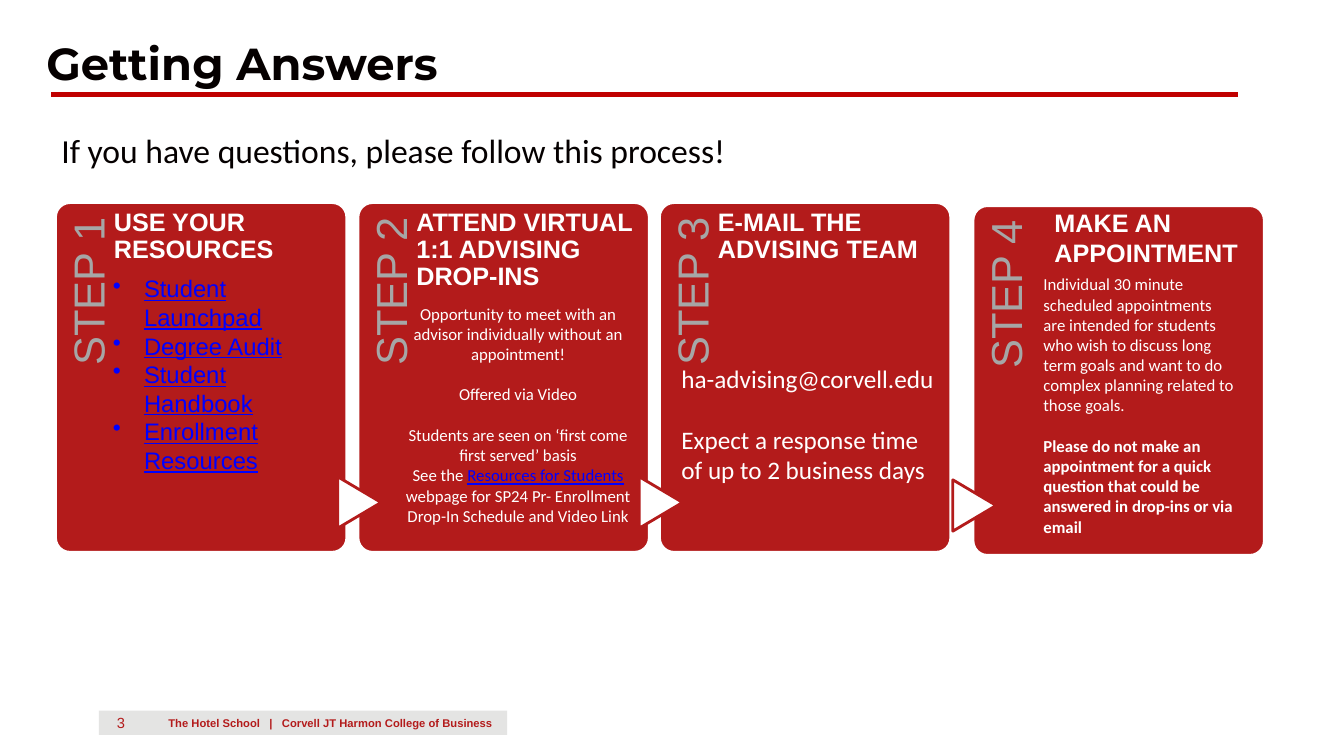
from lxml import etree
from pptx import Presentation
from pptx.dml.color import RGBColor
from pptx.enum.shapes import MSO_CONNECTOR, MSO_SHAPE
from pptx.enum.text import MSO_ANCHOR, MSO_AUTO_SIZE, PP_ALIGN
from pptx.oxml.ns import qn
from pptx.util import Inches, Pt

RED = RGBColor(0xB3, 0x1B, 0x1B)
RULE_RED = RGBColor(0xC0, 0x00, 0x00)
INK = RGBColor(0x05, 0x00, 0x00)
WHITE = RGBColor(0xFF, 0xFF, 0xFF)
STEP_GRAY = RGBColor(0xA6, 0xA6, 0xA6)
FOOTER_GRAY = RGBColor(0xE4, 0xE4, 0xE3)
LINK_BLUE = RGBColor(0x00, 0x00, 0xFF)

RECTANGLE = MSO_SHAPE.RECTANGLE
ROUNDED = MSO_SHAPE.ROUNDED_RECTANGLE
TRIANGLE = MSO_SHAPE.FLOWCHART_EXTRACT
STRAIGHT = MSO_CONNECTOR.STRAIGHT
LEFT, CENTER, RIGHT = PP_ALIGN.LEFT, PP_ALIGN.CENTER, PP_ALIGN.RIGHT
TOP, BOTTOM = MSO_ANCHOR.TOP, MSO_ANCHOR.BOTTOM
NO_AUTOFIT = MSO_AUTO_SIZE.NONE

DEFAULT_INSETS = (0.1, 0.05, 0.1, 0.05)
CARD_WIDTH, CARD_HEIGHT = 2.89, 3.47
CARDS = [
    (0.55, 2.01, "USE YOUR RESOURCES"),
    (3.55, 2.01, "ATTEND VIRTUAL 1:1 ADVISING DROP-INS"),
    (6.54, 2.01, "E-MAIL THE ADVISING TEAM"),
    (9.65, 2.04, "MAKE AN APPOINTMENT"),
]


def style_run(run, size, font, color, bold=False, underline=False):
    run.font.size = Pt(size)
    run.font.name = font
    run.font.color.rgb = color
    run.font.bold = bold
    run.font.underline = underline


def add_text(slide, box, lines, size, font, color, bold=False, underline=False,
             align=LEFT, insets=DEFAULT_INSETS, anchor=TOP, line_spacing=1.0):
    shape = slide.shapes.add_textbox(*map(Inches, box))
    frame = shape.text_frame
    frame.word_wrap = True
    frame.vertical_anchor = anchor
    (frame.margin_left, frame.margin_top,
     frame.margin_right, frame.margin_bottom) = map(Inches, insets)
    frame.text = "\n".join(lines)
    for paragraph in frame.paragraphs:
        paragraph.alignment = align
        paragraph.line_spacing = line_spacing
        for run in paragraph.runs:
            style_run(run, size, font, color, bold, underline)
    return shape


def add_block(slide, kind, box, fill, line=None):
    shape = slide.shapes.add_shape(kind, *map(Inches, box))
    shape.shadow.inherit = False
    shape.fill.solid()
    shape.fill.fore_color.rgb = fill
    if line is None:
        shape.line.fill.background()
    else:
        shape.line.color.rgb = line
        shape.line.width = Pt(2)
    return shape


def add_footer(slide, left, top):
    insets = (0, 0.05, 0, 0.05)
    add_block(slide, RECTANGLE, (left, top, 4.05, 0.24), FOOTER_GRAY)
    add_text(slide, (left + 0.18, top - 0.02, 0.51, 0.28), ["3"], 10.5, "Arial", RED,
             insets=insets, anchor=BOTTOM)
    add_text(slide, (left + 0.69, top, 9.33, 0.24),
             ["The Hotel School\u00a0\u00a0 |\u00a0\u00a0 Corvell JT Harmon College of Business".replace("\u00a0", " ")],
             8, "Arial", RED, bold=True, insets=insets, anchor=BOTTOM)


def add_header(slide, left, top):
    title = slide.shapes.title
    title.left, title.top = Inches(left), Inches(top)
    title.width, title.height = Inches(12.23), Inches(0.64)
    frame = title.text_frame
    frame.text = "Getting Answers"
    frame.vertical_anchor = TOP
    frame.auto_size = NO_AUTOFIT
    frame.paragraphs[0].alignment = LEFT
    style_run(frame.paragraphs[0].runs[0], 32, "Montserrat", INK, bold=True)

    rule_top = Inches(top + 0.64)
    rule = slide.shapes.add_connector(
        STRAIGHT, Inches(left + 0.15), rule_top, Inches(left + 11.92), rule_top)
    rule.line.color.rgb = RULE_RED
    rule.line.width = Pt(3.5)
    etree.SubElement(rule.element.spPr, qn("a:effectLst"))

    add_text(slide, (left + 0.15, top + 0.94, 9.51, 0.5),
             ["If you have questions, please follow this process!"], 24, "Calibri", INK)


def add_card(slide, number, left, top, heading):
    card = add_block(slide, ROUNDED, (left, top, CARD_WIDTH, CARD_HEIGHT), RED, WHITE)
    card.adjustments[0] = 0.05
    label = add_text(slide, (left - 1.14, top + 1.13, 2.85, 0.58), [f"STEP {number}"],
                     31, "Arial", STEP_GRAY, align=RIGHT,
                     insets=(0, 0.12, 0.15, 0), line_spacing=0.9)
    label.rotation = 270
    if number > 1:
        arrow = add_block(slide, TRIANGLE, (left - 0.24, top + 2.76, 0.51, 0.43), WHITE, RED)
        arrow.rotation = 90
    if number == len(CARDS):
        add_text(slide, (left + 0.71, top - 0.03, 2.02, 0.71), [heading],
                 18, "Arial", WHITE, bold=True)
    else:
        add_text(slide, (left + 0.58, top, 2.16, CARD_HEIGHT), [heading],
                 18, "Arial", WHITE, bold=True, insets=(0, 0.07, 0, 0), line_spacing=0.9)


def add_resources(slide, left, top):
    links = ["Student Launchpad", "Degree Audit", "Student Handbook", "Enrollment Resources"]
    shape = add_text(slide, (left + 0.47, top + 0.66, 2.29, 2.1), links,
                     17, "Arial", LINK_BLUE, underline=True)
    for paragraph in shape.text_frame.paragraphs:
        properties = paragraph._p.get_or_add_pPr()
        properties.set("marL", str(Inches(0.31)))
        properties.set("indent", str(-Inches(0.31)))
        etree.SubElement(properties, qn("a:buChar"), char="•")


def add_drop_ins(slide, left, top):
    lines = [
        "Opportunity to meet with an advisor individually without an appointment!",
        "Offered via Video",
        "Students are seen on ‘first come first served’ basis",
        "See the ",
    ]
    shape = add_text(slide, (left + 0.36, top + 0.95, 2.46, 2.4), lines,
                     12, "Calibri", WHITE, align=CENTER)
    paragraphs = shape.text_frame.paragraphs
    for paragraph in paragraphs[1:3]:
        paragraph.space_before = Pt(14.6)
    link = paragraphs[3].add_run()
    link.text = "Resources for Students "
    style_run(link, 12, "Calibri", LINK_BLUE, underline=True)
    ending = paragraphs[3].add_run()
    ending.text = "webpage for SP24 Pr- Enrollment Drop-In Schedule and Video Link"
    style_run(ending, 12, "Calibri", WHITE)


def add_email(slide, left, top):
    shape = add_text(slide, (left + 0.12, top + 1.54, 2.8, 1.31),
                     ["ha-advising@corvell.edu", "Expect a response time of up to 2 business days"],
                     18, "Calibri", WHITE)
    shape.text_frame.paragraphs[1].space_before = Pt(22)


def add_appointment(slide, left, top):
    lines = [
        "Individual 30 minute scheduled appointments are intended for students who wish "
        "to discuss long term goals and want to do complex planning related to those goals.",
        "Please do not make an appointment for a quick question that could be answered "
        "in drop-ins or via email",
    ]
    shape = add_text(slide, (left + 0.6, top + 0.63, 2.09, 2.73), lines, 12, "Calibri", WHITE)
    warning = shape.text_frame.paragraphs[1]
    warning.space_before = Pt(14.6)
    warning.runs[0].font.bold = True


def main():
    presentation = Presentation()
    presentation.slide_width, presentation.slide_height = Inches(13.33), Inches(7.5)
    slide = presentation.slides.add_slide(presentation.slide_layouts[5])
    add_footer(slide, 0.98, 7.05)
    for number, (left, top, heading) in enumerate(CARDS, 1):
        add_card(slide, number, left, top, heading)
    details = [add_resources, add_drop_ins, add_email, add_appointment]
    for add_detail, (left, top, _) in zip(details, CARDS):
        add_detail(slide, left, top)
    add_header(slide, 0.36, 0.3)
    presentation.save("out.pptx")


if __name__ == "__main__":
    main()
